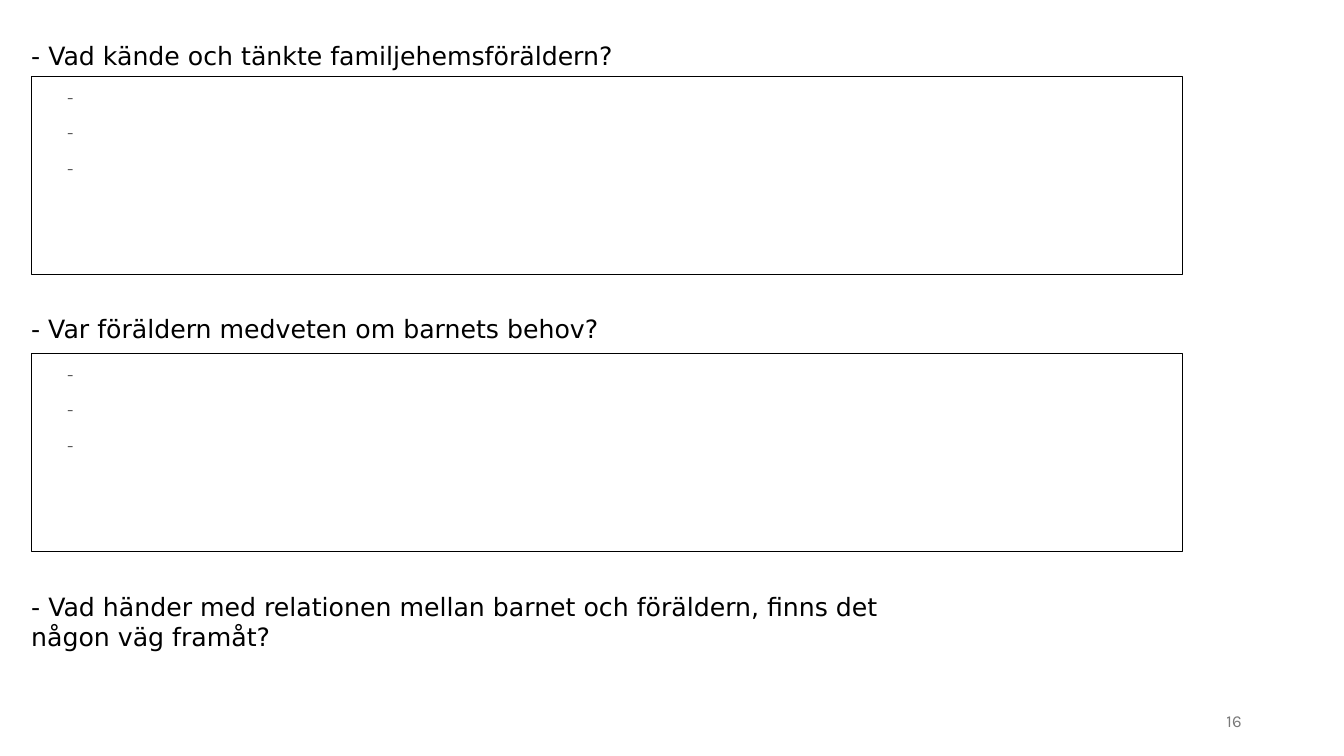
from pptx import Presentation
from pptx.dml.color import RGBColor
from pptx.enum.shapes import MSO_SHAPE
from pptx.enum.text import MSO_ANCHOR, MSO_AUTO_SIZE, PP_ALIGN
from pptx.util import Pt

QUESTION = {"name": "DejaVu Sans", "size": Pt(18)}
ANSWER = {"name": "Cambria", "size": Pt(15)}
NUMBER = {"name": "Karla", "size": Pt(12)}
ANSWER_SPACING = {"line_spacing": 1.07, "space_after": Pt(6),
                  "alignment": PP_ALIGN.LEFT}


def color(hex_string):
    return RGBColor.from_string(hex_string)


def set_all(target, values):
    for name, value in values.items():
        setattr(target, name, value)


def write(para, text, font, hex_string):
    span = para.add_run()
    span.text = text
    set_all(span.font, font)
    span.font.color.rgb = color(hex_string)


def add_question(page, box, text):
    frame = page.shapes.add_textbox(*map(Pt, box)).text_frame
    set_all(frame, {"word_wrap": True,
                    "auto_size": MSO_AUTO_SIZE.SHAPE_TO_FIT_TEXT})
    write(frame.paragraphs[0], text, QUESTION, "000000")


def add_answer_box(page, box, dash_count=3):
    answer_box = page.shapes.add_shape(MSO_SHAPE.RECTANGLE, *map(Pt, box))
    answer_box.shadow.inherit = False
    answer_box.fill.solid()
    answer_box.fill.fore_color.rgb = color("FFFFFF")
    answer_box.line.color.rgb = color("000000")
    answer_box.line.width = Pt(0.75)
    frame = answer_box.text_frame
    set_all(frame, {"word_wrap": True, "vertical_anchor": MSO_ANCHOR.TOP})
    for index in range(dash_count):
        para = frame.add_paragraph() if index else frame.paragraphs[0]
        set_all(para, ANSWER_SPACING)
        # Hanging indent for the dash
        properties = para._p.get_or_add_pPr()
        properties.set("marL", str(Pt(36)))
        properties.set("indent", str(Pt(-18)))
        write(para, "-", ANSWER, "595959")


def add_page_number(page, box, text):
    frame = page.shapes.add_textbox(*map(Pt, box)).text_frame
    set_all(frame, {"word_wrap": True, "vertical_anchor": MSO_ANCHOR.MIDDLE})
    para = frame.paragraphs[0]
    para.alignment = PP_ALIGN.RIGHT
    write(para, text, NUMBER, "797979")


def add_question_page(deck):
    page = deck.slides.add_slide(deck.slide_layouts[6])
    # Questions
    add_question(page, (15.2, 25.2, 850.3, 29),
                 "- Vad kände och tänkte familjehemsföräldern?")
    add_question(page, (15.2, 220.3, 748, 29),
                 "- Var föräldern medveten om barnets behov?")
    add_question(page, (15.2, 418.5, 648.7, 51),
                 "- Vad händer med relationen mellan barnet och föräldern, "
                 "finns det någon väg framåt?")
    # Answer boxes
    for top in (54.7, 252.6):
        add_answer_box(page, (22.7, top, 821.8, 141.3))
    # Page number
    add_page_number(page, (678, 500.5, 216, 28.8), "16")


def main():
    deck = Presentation()
    set_all(deck, {"slide_width": Pt(960), "slide_height": Pt(540)})
    add_question_page(deck)
    deck.save("out.pptx")


if __name__ == "__main__":
    main()
